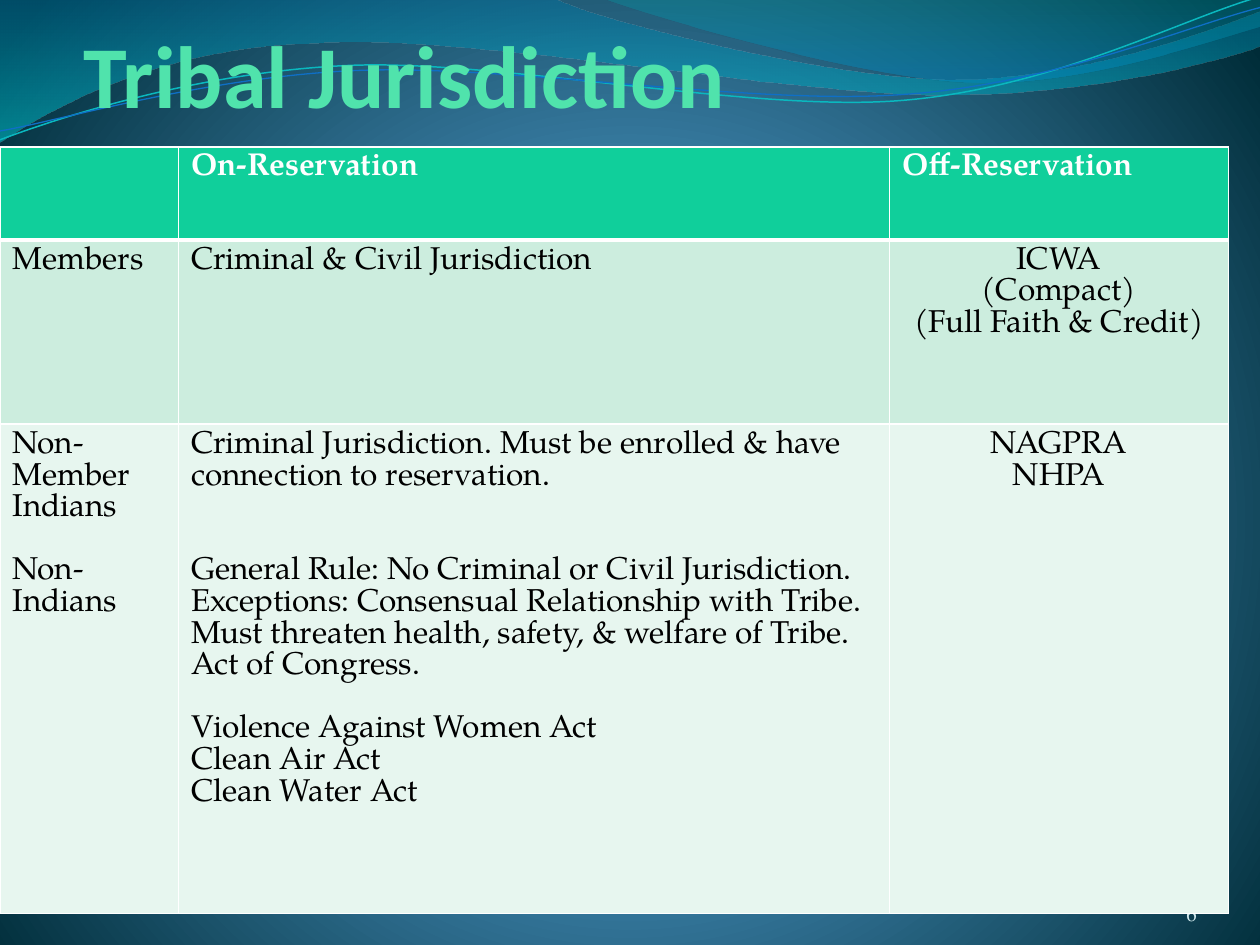
import lxml.etree
import pptx
import pptx.dml.color
import pptx.enum.text
import pptx.oxml
import pptx.oxml.ns
import pptx.util

Cm = pptx.util.Cm
Pt = pptx.util.Pt
Align = pptx.enum.text.PP_ALIGN
Anchor = pptx.enum.text.MSO_ANCHOR
qn = pptx.oxml.ns.qn

CM_PER_INCH = 2.54

# Outlines in inches: a start point, then lines (one point) or Bézier curves (three).
LEFT_WAVE = [
    [(0, 0)], [(4.4, -0.01)],
    [(4.76, 0.17), (6.64, 0.63), (7.58, 0.63)],
    [(8.53, 0.63), (9.58, 0.26), (10, 0.09)],
    [(10.01, 0.36)],
    [(9.83, 0.44), (8.7, 0.76), (7.46, 0.75)],
    [(6.22, 0.75), (3.82, 0.28), (2.57, 0.34)],
    [(1.29, 0.36), (0.46, 0.83), (-0.01, 1.13)],
    [(0, 0)],
]
RIGHT_WAVE = [
    [(4.79, -0.01)],
    [(5.09, 0.11), (6.82, 0.62), (7.69, 0.65)],
    [(8.56, 0.69), (9.61, 0.32), (10, 0.21)],
    [(10, 0)], [(4.79, -0.01)],
]
TEAL_STRAND = [
    [(0, 1.11)],
    [(0.48, 0.93), (1.58, 0.57), (2.77, 0.52)],
    [(3.95, 0.47), (5.93, 0.89), (7.13, 0.8)],
    [(8.33, 0.71), (9.38, 0.15), (9.98, -0.02)],
]
BLUE_STRAND = [
    [(0, 1.04)],
    [(0.47, 0.96), (1.64, 0.61), (2.83, 0.56)],
    [(4.03, 0.51), (5.97, 0.84), (7.17, 0.75)],
    [(8.36, 0.67), (9.41, 0.21), (10, 0.06)],
]

# Each cell is a list of blocks; a block is (lines, blank lines' worth of space above).
ROWS = [
    [[], [(["On-Reservation"], 0)], [(["Off-Reservation"], 0)]],
    [
        [(["Members"], 0)],
        [(["Criminal & Civil Jurisdiction"], 0)],
        [(["ICWA", "(Compact)", "(Full Faith & Credit)"], 0)],
    ],
    [
        [(["Non-", "Member", "Indians"], 0), (["Non-", "Indians"], 1)],
        [
            (["Criminal Jurisdiction. Must be enrolled & have connection to reservation."], 0),
            (["General Rule: No Criminal or Civil Jurisdiction.",
              "Exceptions: Consensual Relationship with Tribe. Must threaten health, "
              "safety, & welfare of Tribe. Act of Congress."], 2),
            (["Violence Against Women Act", "Clean Air Act", "Clean Water Act"], 1),
        ],
        [(["NAGPRA", "NHPA"], 0)],
    ],
]


def color(hex_code):
    return pptx.dml.color.RGBColor.from_string(hex_code)


def bend(shape, segments):
    """Turn each run of three line steps that stands for a curve into one Bézier."""
    steps = iter(shape.element.findall(".//" + qn("a:lnTo")))
    for segment in segments:
        group = [next(steps) for _ in segment]
        if len(group) == 3:
            curve = lxml.etree.Element(qn("a:cubicBezTo"))
            group[0].addprevious(curve)
            for step in group:
                curve.append(step[0])
                step.getparent().remove(step)


def set_gradient(parent, stops, direction):
    """Swap the parent's solid fill for a gradient of (position, colour, opacity) stops."""
    stop_xml = "".join(
        f'<a:gs pos="{position * 1000}"><a:srgbClr val="{hex_code}">'
        f'<a:alpha val="{opacity * 1000}"/></a:srgbClr></a:gs>'
        for position, hex_code, opacity in stops)
    gradient = pptx.oxml.parse_xml(
        f'<a:gradFill {pptx.oxml.ns.nsdecls("a")} rotWithShape="1">'
        f'<a:gsLst>{stop_xml}</a:gsLst>{direction}</a:gradFill>')
    parent.replace(parent.find(qn("a:solidFill")), gradient)


class SlideBuilder:
    body_font = "TeX Gyre Pagella"
    title_font = "Calibri"
    body_size = 18
    row_fills = ["10CF9B", "CCEDDE", "E7F6EF"]

    def __init__(self, page):
        self.page = page

    def background(self, stops, direction):
        fill = self.page.background.fill
        fill.solid()
        fill.fore_color.rgb = color(stops[0][1])
        set_gradient(self.page.element.find(".//" + qn("p:bgPr")), stops, direction)

    def freeform(self, outline, close):
        points = [(Cm(x * CM_PER_INCH), Cm(y * CM_PER_INCH))
                  for segment in outline for x, y in segment]
        builder = self.page.shapes.build_freeform(*points[0])
        builder.add_line_segments(points[1:], close=close)
        shape = builder.convert_to_shape()
        bend(shape, outline[1:])
        shape.shadow.inherit = False
        return shape

    def wave(self, outline, stops):
        shape = self.freeform(outline, True)
        shape.line.fill.background()
        shape.fill.solid()
        set_gradient(shape.element.spPr, stops, '<a:lin ang="5400000" scaled="1"/>')

    def strand(self, outline, hex_code, width):
        shape = self.freeform(outline, False)
        shape.fill.background()
        shape.line.color.rgb = color(hex_code)
        shape.line.width = Pt(width)

    def style(self, para, font, size, hex_code, bold=False, align=Align.LEFT):
        para.font.name = font
        para.font.size = Pt(size)
        para.font.color.rgb = color(hex_code)
        para.font.bold = bold
        para.alignment = align

    def text(self, words, left, top, width, height, **style):
        box = self.page.shapes.add_textbox(Cm(left), Cm(top), Cm(width), Cm(height))
        frame = box.text_frame
        frame.word_wrap = True
        frame.vertical_anchor = Anchor.BOTTOM
        frame.margin_left = frame.margin_top = frame.margin_right = frame.margin_bottom = 0
        para = frame.paragraphs[0]
        para.text = words
        self.style(para, **style)

    def borders(self, cell, widths):
        properties = cell._tc.get_or_add_tcPr()
        for index, (side, width) in enumerate(widths.items()):
            line = lxml.etree.Element(qn(f"a:ln{side}"), w=str(Pt(width)))
            fill = lxml.etree.SubElement(line, qn("a:solidFill"))
            lxml.etree.SubElement(fill, qn("a:srgbClr"), val="FFFFFF")
            properties.insert(index, line)

    def cell(self, cell, blocks, fill, **style):
        cell.fill.solid()
        cell.fill.fore_color.rgb = color(fill)
        para = cell.text_frame.paragraphs[0]
        for lines, gap in blocks:
            for index, line in enumerate(lines):
                if para.text:
                    para = cell.text_frame.add_paragraph()
                para.text = line
                self.style(para, self.body_font, self.body_size, **style)
                if gap and index == 0:
                    para.space_before = Pt(gap * self.body_size)

    def table(self, rows, left, top, widths, heights):
        table = self.page.shapes.add_table(
            len(rows), len(widths), Cm(left), Cm(top),
            Cm(sum(widths)), Cm(sum(heights))).table
        for column, width in zip(table.columns, widths):
            column.width = Cm(width)
        for r, (row, height) in enumerate(zip(rows, heights)):
            table.rows[r].height = Cm(height)
            header = r == 0
            for c, blocks in enumerate(row):
                centred = c == 2 and not header
                cell = table.cell(r, c)
                self.cell(cell, blocks, self.row_fills[r],
                          hex_code="FFFFFF" if header else "000000", bold=header,
                          align=Align.CENTER if centred else Align.LEFT)
                self.borders(cell, {"L": 1, "R": 1, "T": 3 if r == 1 else 1,
                                    "B": 3 if header else 1})


def main():
    deck = pptx.Presentation()
    deck.slide_width, deck.slide_height = Cm(25.4), Cm(19.05)
    page = SlideBuilder(deck.slides.add_slide(deck.slide_layouts[6]))
    page.background(
        [(0, "4AA0D6", 100), (25, "4C98C7", 100), (100, "002C38", 100)],
        '<a:path path="circle"><a:fillToRect l="10000" t="110000" r="10000" b="100000"/></a:path>')
    page.wave(LEFT_WAVE, [(0, "0074A1", 45), (100, "00C6CF", 55)])
    page.wave(RIGHT_WAVE, [(0, "00A1A9", 30), (80, "008BBF", 45)])
    page.strand(TEAL_STRAND, "0AB8BF", 0.85)
    page.strand(BLUE_STRAND, "0F6FC6", 0.75)
    page.text("Tribal Jurisdiction", 1.69, 1.47, 21.39, 1.07,
              font=page.title_font, size=50.4, hex_code="50E3AC", bold=True)
    page.text("6", 22.02, 17.65, 2.11, 1.02,
              font=page.body_font, size=12, hex_code="D1EAEE", align=Align.RIGHT)
    page.table(ROWS, 0, 2.96, [3.6, 14.33, 6.83], [1.88, 3.71, 9.87])
    deck.save("out.pptx")


if __name__ == "__main__":
    main()
